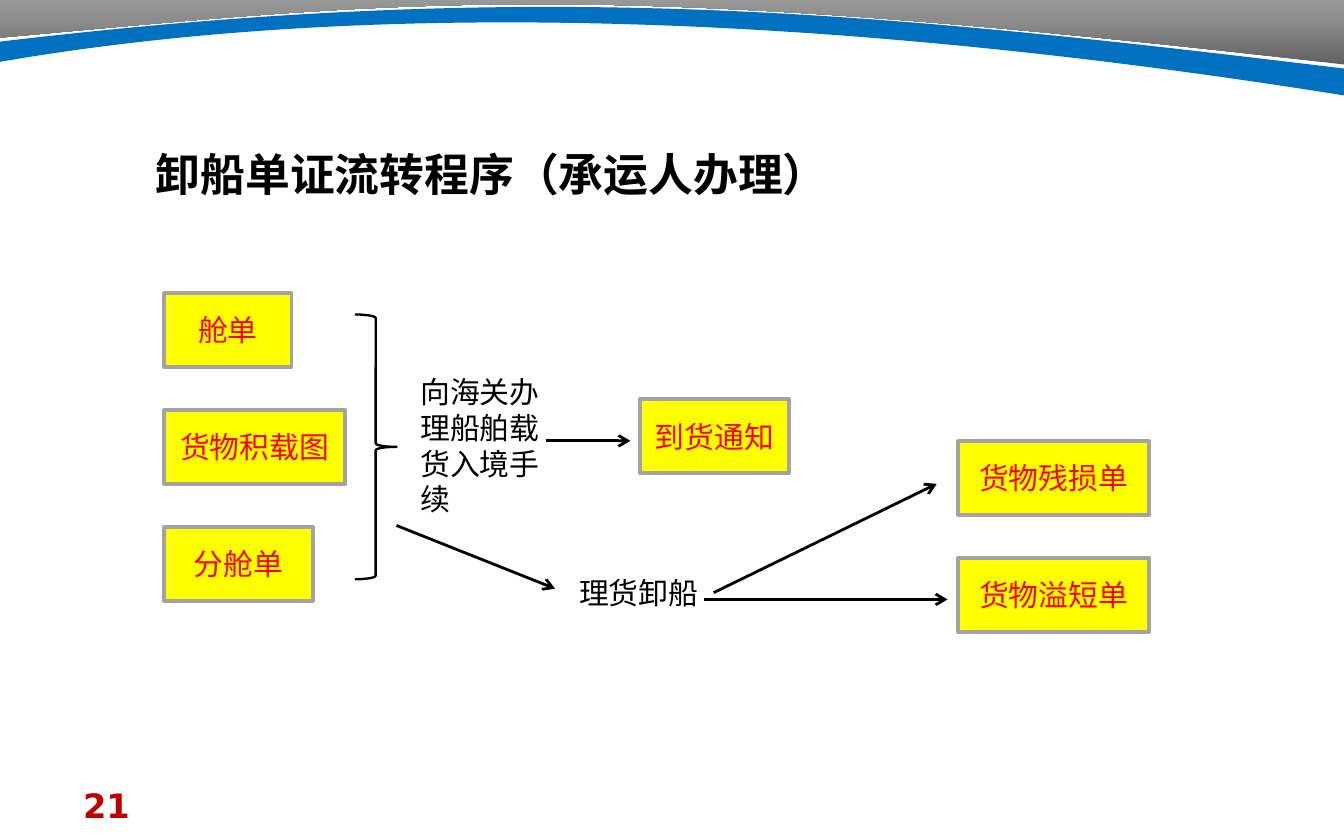
from copy import deepcopy

from lxml import etree
from pptx import Presentation
from pptx import util as u
from pptx.dml.color import RGBColor
from pptx.enum import shapes, text
from pptx.oxml import ns

PX = 9144
CJK_FONT = "Noto Sans CJK SC"
NUMBER_FONT = "DejaVu Sans"
BLACK = RGBColor(0x00, 0x00, 0x00)
RED = RGBColor(0xFF, 0x00, 0x00)
DARK_RED = RGBColor(0xC0, 0x00, 0x00)
YELLOW = RGBColor(0xFF, 0xFF, 0x00)
BORDER_GREY = RGBColor(0xA3, 0xA3, 0xA3)
BLUE = RGBColor(0x00, 0x70, 0xC0)
BAND_GREYS = (RGBColor(0x62, 0x62, 0x62), RGBColor(0x8C, 0x8C, 0x8C), RGBColor(0xA6, 0xA6, 0xA6))


def px(length):
    return u.Emu(length * PX)


def write(frame, content, size=16, color=BLACK, font=CJK_FONT, bold=False,
          align=text.PP_ALIGN.LEFT, anchor=text.MSO_ANCHOR.TOP, wrap=False):
    frame.word_wrap = wrap
    frame.vertical_anchor = anchor
    paragraph = frame.paragraphs[0]
    paragraph.alignment = align
    run = paragraph.add_run()
    run.text = content
    run.font.size = u.Pt(size)
    run.font.bold = bold
    run.font.color.rgb = color
    run.font.name = font
    east_asian = etree.SubElement(run._r.get_or_add_rPr(), ns.qn("a:ea"))
    east_asian.set("typeface", font)


class FlowSlide:
    """Draws the elements of a document flow chart on one slide."""

    def __init__(self, slide):
        self.shapes = slide.shapes

    def band(self, points, curve_starts):
        corners = [(px(x), px(y)) for x, y in points]
        builder = self.shapes.build_freeform(*corners[0], scale=1.0)
        builder.add_line_segments(corners[1:], close=True)
        shape = builder.convert_to_shape()
        shape.shadow.inherit = False
        shape.line.fill.background()
        segments = list(shape._element.iter(ns.qn("a:lnTo")))
        for start in curve_starts:
            curve = etree.Element(ns.qn("a:cubicBezTo"))
            segments[start].addprevious(curve)
            for segment in segments[start:start + 3]:
                curve.append(segment[0])
                segment.getparent().remove(segment)
        return shape

    def blue_band(self, points, curve_starts):
        shape = self.band(points, curve_starts)
        shape.fill.solid()
        shape.fill.fore_color.rgb = BLUE

    def grey_band(self, points, curve_starts):
        fill = self.band(points, curve_starts).fill
        fill.gradient()
        fill.gradient_angle = 90
        first = fill.gradient_stops[0]._gs
        first.addnext(deepcopy(first))
        for stop, position, color in zip(fill.gradient_stops, (0, 0.5, 1), BAND_GREYS):
            stop.position = position
            stop.color.rgb = color

    def label(self, left, top, width, height, content, **style):
        box = self.shapes.add_textbox(px(left), px(top), px(width), px(height))
        write(box.text_frame, content, **style)

    def document(self, left, top, width, content):
        shape = self.shapes.add_shape(
            shapes.MSO_SHAPE.RECTANGLE, px(left), px(top), px(width), px(55))
        shape.shadow.inherit = False
        shape.fill.solid()
        shape.fill.fore_color.rgb = YELLOW
        shape.line.color.rgb = BORDER_GREY
        shape.line.width = u.Pt(2)
        write(shape.text_frame, content, color=RED, align=text.PP_ALIGN.CENTER,
              anchor=text.MSO_ANCHOR.MIDDLE)

    def brace(self, left, top, width, height):
        shape = self.shapes.add_shape(
            shapes.MSO_SHAPE.RIGHT_BRACE, px(left), px(top), px(width), px(height))
        shape.shadow.inherit = False
        shape.fill.background()
        shape.line.color.rgb = BLACK
        shape.line.width = u.Pt(1.25)

    def arrow(self, x1, y1, x2, y2):
        connector = self.shapes.add_connector(
            shapes.MSO_CONNECTOR.STRAIGHT, px(x1), px(y1), px(x2), px(y2))
        connector.line.color.rgb = BLACK
        connector.line.width = u.Pt(1.5)
        tail = etree.SubElement(connector.line._get_or_add_ln(), ns.qn("a:tailEnd"))
        tail.set("type", "arrow")
        etree.SubElement(connector._element.spPr, ns.qn("a:effectLst"))


def main():
    presentation = Presentation()
    presentation.slide_width = px(1000)
    presentation.slide_height = px(625)
    flow = FlowSlide(presentation.slides.add_slide(presentation.slide_layouts[6]))

    flow.label(52, 579, 233, 33, "21", size=18, color=DARK_RED, font=NUMBER_FONT,
               bold=True, wrap=True)
    flow.grey_band([(1000, 48), (443, -17), (308, 0), (0, 28),
                    (0, 19), (0, -2), (1000, -2)], curve_starts=[0])
    flow.blue_band([(0, 31), (403, -17), (652, 9), (1000, 51),
                    (1000, 71), (605, 8), (267, 0), (0, 46)], curve_starts=[0, 4])
    flow.label(106, 104, 551, 50, "卸船单证流转程序（承运人办理）", size=24, bold=True, wrap=True)

    cargo_papers = (("舱单", 95), ("货物积载图", 135), ("分舱单", 111))
    for row, (name, width) in enumerate(cargo_papers):
        flow.document(122, 218 + 87 * row, width, name)
    flow.brace(264, 234, 31, 197)
    flow.label(303, 273, 126, 118, "向海关办理船舶载货入境手续", wrap=True)
    flow.document(476, 297, 111, "到货通知")
    flow.label(421, 423, 111, 37, "理货卸船")
    for row, name in enumerate(("货物残损单", "货物溢短单")):
        flow.document(713, 328 + 87 * row, 142, name)

    for ends in ((406, 328, 469, 328), (295, 391, 413, 438),
                 (524, 446, 705, 446), (531, 441, 697, 360)):
        flow.arrow(*ends)

    presentation.save("out.pptx")


if __name__ == "__main__":
    main()
